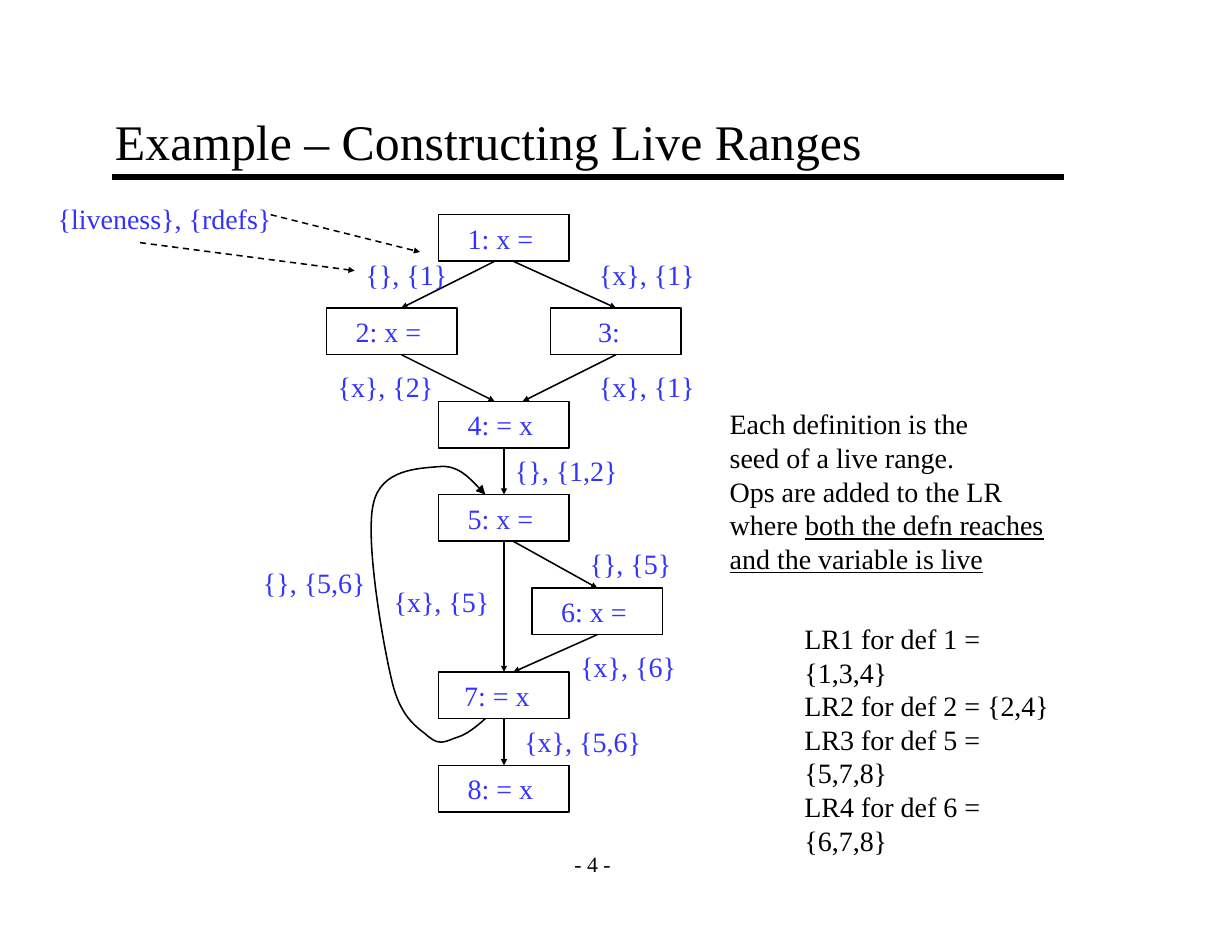
from lxml.etree import SubElement
from pptx import Presentation
from pptx.dml.color import RGBColor
from pptx.enum.dml import MSO_LINE
from pptx.enum.shapes import MSO_CONNECTOR, MSO_SHAPE
from pptx.enum.text import MSO_ANCHOR, MSO_AUTO_SIZE, PP_ALIGN
from pptx.oxml.ns import qn
from pptx.util import Cm, Pt

FONT = "Times New Roman"
BLACK = "000000"
BLUE = "3333FF"
BOX_W, BOX_H = 14, 5
LABEL_H = 4.8

BOXES = [
    ("1: x = ", 47, 23), ("2: x = ", 35, 33), ("3:  ", 59, 33), ("4: = x ", 47, 43),
    ("5: x = ", 47, 53), ("6: x = ", 57, 63), ("7: = x  ", 47, 72), ("8: = x ", 47, 82),
]
EDGES = [
    (53, 28, 43, 33), (55, 28, 66, 33), (66, 38, 56, 43), (43, 38, 53, 43),
    (54, 48, 54, 53), (55, 58, 64, 63), (54, 58, 54, 72), (64, 68, 55, 72),
    (54, 77, 54, 82),
]
POINTERS = [(15, 26, 38, 29), (29, 23, 45, 27)]
BACK_EDGE = [
    (52, 77), (51, 77.9), (50, 78.7), (49, 79), (48, 79.3), (47.2, 80), (46, 79),
    (44.9, 78), (43, 77.2), (42, 73), (41, 68.9), (39.1, 57.8), (40, 54),
    (40.8, 50.2), (45, 50.2), (47, 50), (49, 49.8), (50.5, 51.4), (52, 53),
]
LABELS = [
    ("{x}, {5,6}", 55, 77, 14.9), ("{x}, {6}", 61, 69, 12.7), ("{}, {5}", 62, 58, 11.2),
    ("{x}, {5}", 41, 62, 12.7), ("{}, {1,2}", 54, 48, 13.4), ("{}, {1}", 38, 27, 11.2),
    ("{x}, {2}", 35, 39, 12.7), ("{x}, {1}", 63, 27, 12.7), ("{x}, {1}", 63, 39, 12.7),
    ("{}, {5,6}", 27, 60, 13.4), ("{liveness}, {rdefs}", 5, 21, 25.3),
]
LIVE_RANGES = [
    [("LR1 for def 1 = {1,3,4}", False)],
    [("LR2 for def 2 = {2,4}", False)],
    [("LR3 for def 5 = {5,7,8}", False)],
    [("LR4 for def 6 = {6,7,8}", False)],
]
EXPLANATION = [
    [("Each definition is the", False)],
    [("seed of a live range.", False)],
    [("Ops are added to the LR", False)],
    [("where ", False), ("both the defn reaches", True)],
    [("and the variable is live", True)],
]


def u(n):
    return Cm(n * 2.54 / 12)


def rgb(color):
    return RGBColor.from_string(color)


def add_run(p, text, size, color, underline=False):
    r = p.add_run()
    r.text = text
    r.font.name = FONT
    r.font.size = Pt(size)
    r.font.color.rgb = rgb(color)
    if underline:
        r.font.underline = True


def style_line(sp, width=1, dash=None, head=None):
    sp.line.color.rgb = rgb(BLACK)
    sp.line.width = Pt(width)
    if dash:
        sp.line.dash_style = dash
    if head:
        ln = sp.line._get_or_add_ln()
        SubElement(ln, qn("a:tailEnd"), type="triangle", w=head, len=head)


def add_title(s, text):
    sp = s.shapes.title
    sp.left, sp.top, sp.width, sp.height = u(11), u(11), u(102), u(8)
    tf = sp.text_frame
    tf.auto_size = MSO_AUTO_SIZE.NONE
    tf.vertical_anchor = MSO_ANCHOR.BOTTOM
    tf.margin_left = tf.margin_right = Cm(0.28)
    tf.margin_top = tf.margin_bottom = Cm(0.15)
    p = tf.paragraphs[0]
    p.alignment = PP_ALIGN.LEFT
    add_run(p, text, 32, BLACK)


def add_box(s, text, x, y):
    sp = s.shapes.add_shape(MSO_SHAPE.RECTANGLE, u(x), u(y), u(BOX_W), u(BOX_H))
    sp.shadow.inherit = False
    sp.fill.background()
    style_line(sp)
    tf = sp.text_frame
    tf.word_wrap = False
    tf.vertical_anchor = MSO_ANCHOR.MIDDLE
    p = tf.paragraphs[0]
    p.alignment = PP_ALIGN.CENTER
    add_run(p, text, 18, BLUE)


def add_line(s, x1, y1, x2, y2, width=1, dash=None, head=None):
    sp = s.shapes.add_connector(MSO_CONNECTOR.STRAIGHT, u(x1), u(y1), u(x2), u(y2))
    style_line(sp, width, dash, head)
    SubElement(sp._element.spPr, qn("a:effectLst"))


def add_curve(s, points):
    start, *rest = [(u(x), u(y)) for x, y in points]
    fb = s.shapes.build_freeform(*start)
    fb.add_line_segments(rest, close=False)
    sp = fb.convert_to_shape()
    outline = sp._element.xpath(".//a:path")[0]
    segments = outline.findall(qn("a:lnTo"))
    for i in range(0, len(segments), 3):
        bezier = SubElement(outline, qn("a:cubicBezTo"))
        for segment in segments[i:i + 3]:
            bezier.append(segment[0])
            outline.remove(segment)
    sp.shadow.inherit = False
    sp.fill.background()
    style_line(sp, head="med")


def add_text(s, lines, x, y, w, h, size=18, color=BLACK, align=PP_ALIGN.LEFT):
    tf = s.shapes.add_textbox(u(x), u(y), u(w), u(h)).text_frame
    tf.word_wrap = False
    tf.auto_size = MSO_AUTO_SIZE.SHAPE_TO_FIT_TEXT
    for i, runs in enumerate(lines):
        p = tf.add_paragraph() if i else tf.paragraphs[0]
        p.alignment = align
        for text, underline in runs:
            add_run(p, text, size, color, underline)
    return tf


def main():
    prs = Presentation()
    prs.slide_width, prs.slide_height = Cm(27.94), Cm(21.59)
    s = prs.slides.add_slide(prs.slide_layouts[5])

    add_line(s, 12, 19, 114, 19, width=4)
    tf = add_text(s, [[("- 4 -", False)]], 59, 90, 9, 5, size=14, align=PP_ALIGN.CENTER)
    tf.auto_size = MSO_AUTO_SIZE.NONE
    tf.vertical_anchor = MSO_ANCHOR.MIDDLE
    add_title(s, "Example – Constructing Live Ranges")

    for box in BOXES:
        add_box(s, *box)
    for edge in EDGES:
        add_line(s, *edge, head="sm")
    add_curve(s, BACK_EDGE)
    for text, x, y, w in LABELS:
        add_text(s, [[(text, False)]], x, y, w, LABEL_H, color=BLUE)
    add_text(s, LIVE_RANGES, 85, 66, 30.8, 15.6)
    add_text(s, EXPLANATION, 77, 43, 36.1, 19.2)
    for pointer in POINTERS:
        add_line(s, *pointer, dash=MSO_LINE.DASH, head="sm")

    prs.save("out.pptx")


if __name__ == "__main__":
    main()
